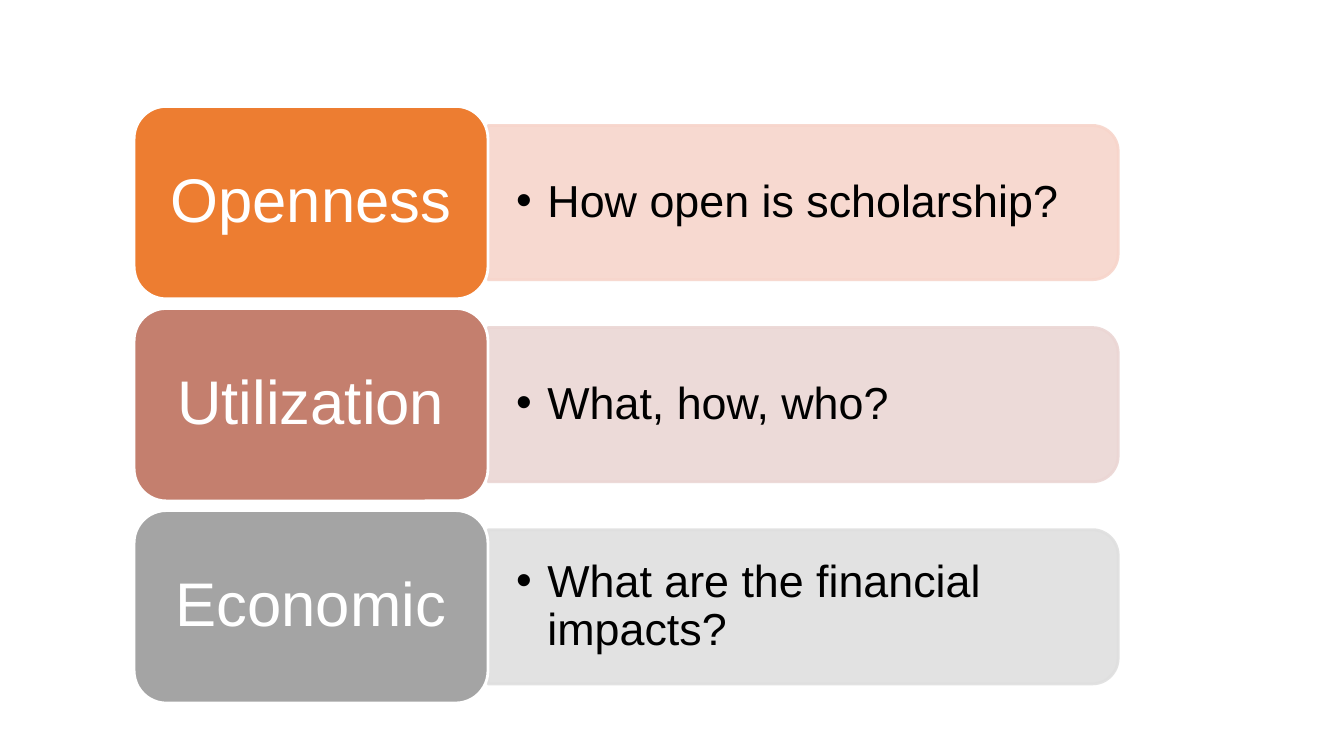
"""Build a slide with three themes, each beside its guiding question."""
from lxml import etree
from pptx import Presentation
from pptx.dml.color import RGBColor
from pptx.enum.shapes import MSO_SHAPE
from pptx.enum.text import MSO_ANCHOR, PP_ALIGN
from pptx.oxml.ns import qn
from pptx.util import Inches, Pt

CARD_SHAPE = MSO_SHAPE.ROUNDED_RECTANGLE
PANEL_SHAPE = MSO_SHAPE.ROUND_2_SAME_RECTANGLE
MIDDLE = MSO_ANCHOR.MIDDLE
CENTER, LEFT = PP_ALIGN.CENTER, PP_ALIGN.LEFT

THEMES = [
    ("Openness", "How open is scholarship?", "orange", "peach"),
    ("Utilization", "What, how, who?", "clay", "rose"),
    ("Economic", "What are the financial impacts?", "gray", "silver"),
]
COLORS = {
    "orange": "ED7D31", "peach": "F7D5CB",
    "clay": "C47F6E", "rose": "EBD6D4",
    "gray": "A4A4A4", "silver": "DFDFDF",
    "white": "FFFFFF", "black": "000000",
}
FONT = "Arial"
FIRST_CENTER, ROW_PITCH = 2.01, 2.005
CARD_LEFT, CARD_WIDTH, CARD_HEIGHT = 1.33, 3.51, 1.91
PANEL_LEFT, PANEL_LENGTH, PANEL_HEIGHT = 4.84, 6.25, 1.53
LABEL_INSET = 0.09
QUESTION_LEFT, QUESTION_WIDTH, QUESTION_HEIGHT = 4.85, 6.17, 1.38
BULLET_INDENT = 0.31
CORNER = 0.167


def color(name):
    return RGBColor.from_string(COLORS[name])


def add_block(slide, kind, box, corners, fill, outline):
    shape = slide.shapes.add_shape(kind, *map(Inches, box))
    for index, value in enumerate(corners):
        shape.adjustments[index] = value
    shape.shadow.inherit = False
    shape.fill.solid()
    shape.fill.fore_color.rgb = color(fill)
    shape.line.color.rgb = color(outline)
    shape.line.width = Pt(2)
    return shape


def add_text(slide, text, box, insets, size, ink, alignment):
    frame = slide.shapes.add_textbox(*map(Inches, box)).text_frame
    frame.word_wrap = True
    frame.vertical_anchor = MIDDLE
    frame.margin_left = frame.margin_right = Inches(insets[0])
    frame.margin_top = frame.margin_bottom = Inches(insets[1])
    paragraph = frame.paragraphs[0]
    paragraph.alignment = alignment
    paragraph.line_spacing = 0.9
    run = paragraph.add_run()
    run.text = text
    run.font.name = FONT
    run.font.size = Pt(size)
    run.font.color.rgb = color(ink)
    return paragraph


def add_bullet(paragraph):
    paragraph.level = 1
    properties = paragraph._p.get_or_add_pPr()
    properties.set("marL", str(Inches(BULLET_INDENT)))
    properties.set("indent", str(-Inches(BULLET_INDENT)))
    bullet_color = etree.SubElement(properties, qn("a:buClr"))
    etree.SubElement(bullet_color, qn("a:srgbClr"), val=COLORS["black"])
    etree.SubElement(properties, qn("a:buFont"), typeface=FONT)
    etree.SubElement(properties, qn("a:buChar"), char="•")


def add_panel(slide, center, tint):
    left = PANEL_LEFT + (PANEL_LENGTH - PANEL_HEIGHT) / 2
    box = (left, center - PANEL_LENGTH / 2, PANEL_HEIGHT, PANEL_LENGTH)
    panel = add_block(slide, PANEL_SHAPE, box, (CORNER, 0), tint, tint)
    panel.rotation = 90
    for tone in panel._element.spPr.iter(qn("a:srgbClr")):
        etree.SubElement(tone, qn("a:alpha"), val="90000")


def add_theme(slide, center, label, question, fill, tint):
    add_panel(slide, center, tint)
    question_box = (QUESTION_LEFT, center - QUESTION_HEIGHT / 2,
                    QUESTION_WIDTH, QUESTION_HEIGHT)
    add_bullet(add_text(slide, question, question_box, (0.27, 0.14), 32, "black", LEFT))
    top = center - CARD_HEIGHT / 2
    card_box = (CARD_LEFT, top, CARD_WIDTH, CARD_HEIGHT)
    add_block(slide, CARD_SHAPE, card_box, (CORNER,), fill, "white")
    label_box = (CARD_LEFT + LABEL_INSET, top + LABEL_INSET,
                 CARD_WIDTH - 2 * LABEL_INSET, CARD_HEIGHT - 2 * LABEL_INSET)
    add_text(slide, label, label_box, (0.18, 0.09), 44, "white", CENTER)


def main():
    presentation = Presentation()
    presentation.slide_width = Inches(13.33)
    presentation.slide_height = Inches(7.5)
    slide = presentation.slides.add_slide(presentation.slide_layouts[6])
    for row, theme in enumerate(THEMES):
        add_theme(slide, FIRST_CENTER + row * ROW_PITCH, *theme)
    presentation.save("out.pptx")


if __name__ == "__main__":
    main()
